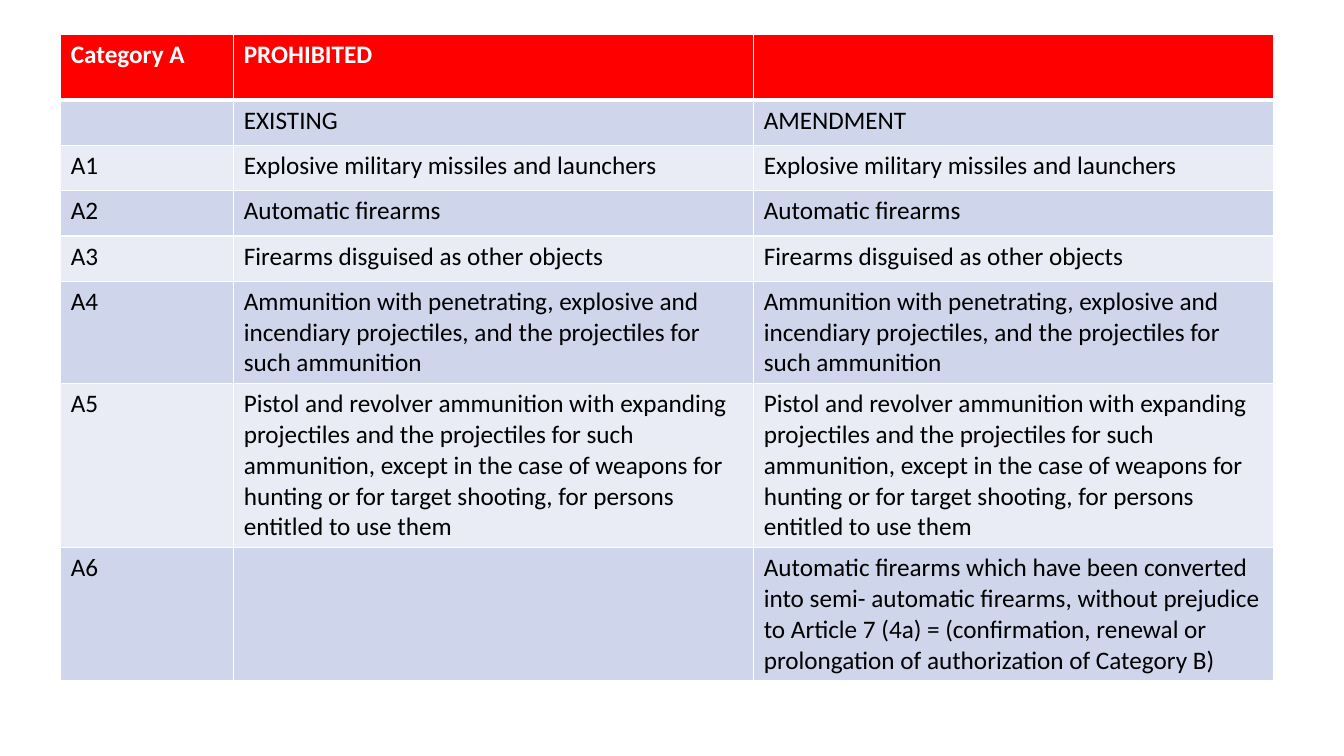
from dataclasses import dataclass

from lxml.etree import SubElement
from pptx import Presentation
from pptx.dml.color import RGBColor
from pptx.oxml.ns import qn
from pptx.table import Table, _Cell
from pptx.util import Pt


@dataclass(frozen=True)
class Theme:
    font: str = "Calibri"
    size: float = 18
    header_fill: str = "FF0000"
    header_text: str = "FFFFFF"
    body_text: str = "000000"
    bands: tuple[str, str] = ("CFD5EA", "E9EBF5")
    border: str = "FFFFFF"
    border_width: float = 1
    header_rule_width: float = 3


@dataclass(frozen=True)
class CategoryRow:
    height: float
    code: str
    existing: str
    amendment: str


THEME = Theme()
COLUMN_WIDTHS = (123.6, 371.4, 371.4)
TABLE_LEFT, TABLE_TOP, TABLE_HEIGHT = 43.4, 24.6, 456.5
LINE_HEIGHT = 32.4


def unchanged(height: float, code: str, wording: str) -> CategoryRow:
    return CategoryRow(height, code, wording, wording)


ROWS = (
    CategoryRow(46.8, "Category A", "PROHIBITED", ""),
    CategoryRow(LINE_HEIGHT, "", "EXISTING", "AMENDMENT"),
    unchanged(LINE_HEIGHT, "A1", "Explosive military missiles and launchers"),
    unchanged(LINE_HEIGHT, "A2", "Automatic firearms"),
    unchanged(LINE_HEIGHT, "A3", "Firearms disguised as other objects"),
    unchanged(
        55.4,
        "A4",
        "Ammunition with penetrating, explosive and incendiary projectiles, "
        "and the projectiles for such ammunition",
    ),
    unchanged(
        79.2,
        "A5",
        "Pistol and revolver ammunition with expanding projectiles and the projectiles "
        "for such ammunition, except in the case of weapons for hunting or for target "
        "shooting, for persons entitled to use them",
    ),
    CategoryRow(
        79.2,
        "A6",
        "",
        "Automatic firearms which have been converted into semi- automatic firearms, "
        "without prejudice to Article 7 (4a) = (confirmation, renewal or prolongation "
        "of authorization of Category B)",
    ),
)


def set_borders(cell: _Cell, top: float, bottom: float) -> None:
    properties = cell._tc.get_or_add_tcPr()
    side = THEME.border_width
    widths = {"a:lnL": side, "a:lnR": side, "a:lnT": top, "a:lnB": bottom}
    for tag, width in widths.items():
        line = SubElement(properties, qn(tag), w=str(Pt(width)))
        fill = SubElement(line, qn("a:solidFill"))
        SubElement(fill, qn("a:srgbClr"), val=THEME.border)


def write_cell(cell: _Cell, text: str, color: str, bold: bool) -> None:
    paragraph = cell.text_frame.paragraphs[0]
    paragraph.font.size = Pt(THEME.size)
    if not text:
        return
    run = paragraph.add_run()
    run.text = text
    run.font.name = THEME.font
    run.font.size = Pt(THEME.size)
    run.font.bold = bold
    run.font.color.rgb = RGBColor.from_string(color)


def fill_row(table: Table, index: int, row: CategoryRow) -> None:
    is_header = index == 0
    background = THEME.header_fill if is_header else THEME.bands[(index - 1) % 2]
    color = THEME.header_text if is_header else THEME.body_text
    top = THEME.header_rule_width if index == 1 else THEME.border_width
    bottom = THEME.header_rule_width if is_header else THEME.border_width
    table.rows[index].height = Pt(row.height)
    for column, text in enumerate((row.code, row.existing, row.amendment)):
        cell = table.cell(index, column)
        set_borders(cell, top, bottom)
        cell.fill.solid()
        cell.fill.fore_color.rgb = RGBColor.from_string(background)
        write_cell(cell, text, color, is_header)


def main() -> None:
    presentation = Presentation()
    presentation.slide_width = Pt(960)
    presentation.slide_height = Pt(540)
    slide = presentation.slides.add_slide(presentation.slide_layouts[6])
    frame = slide.shapes.add_table(
        len(ROWS), len(COLUMN_WIDTHS), Pt(TABLE_LEFT), Pt(TABLE_TOP),
        Pt(sum(COLUMN_WIDTHS)), Pt(TABLE_HEIGHT),
    )
    for column, width in zip(frame.table.columns, COLUMN_WIDTHS):
        column.width = Pt(width)
    for index, row in enumerate(ROWS):
        fill_row(frame.table, index, row)
    frame.height = Pt(TABLE_HEIGHT)
    presentation.save("out.pptx")


if __name__ == "__main__":
    main()
